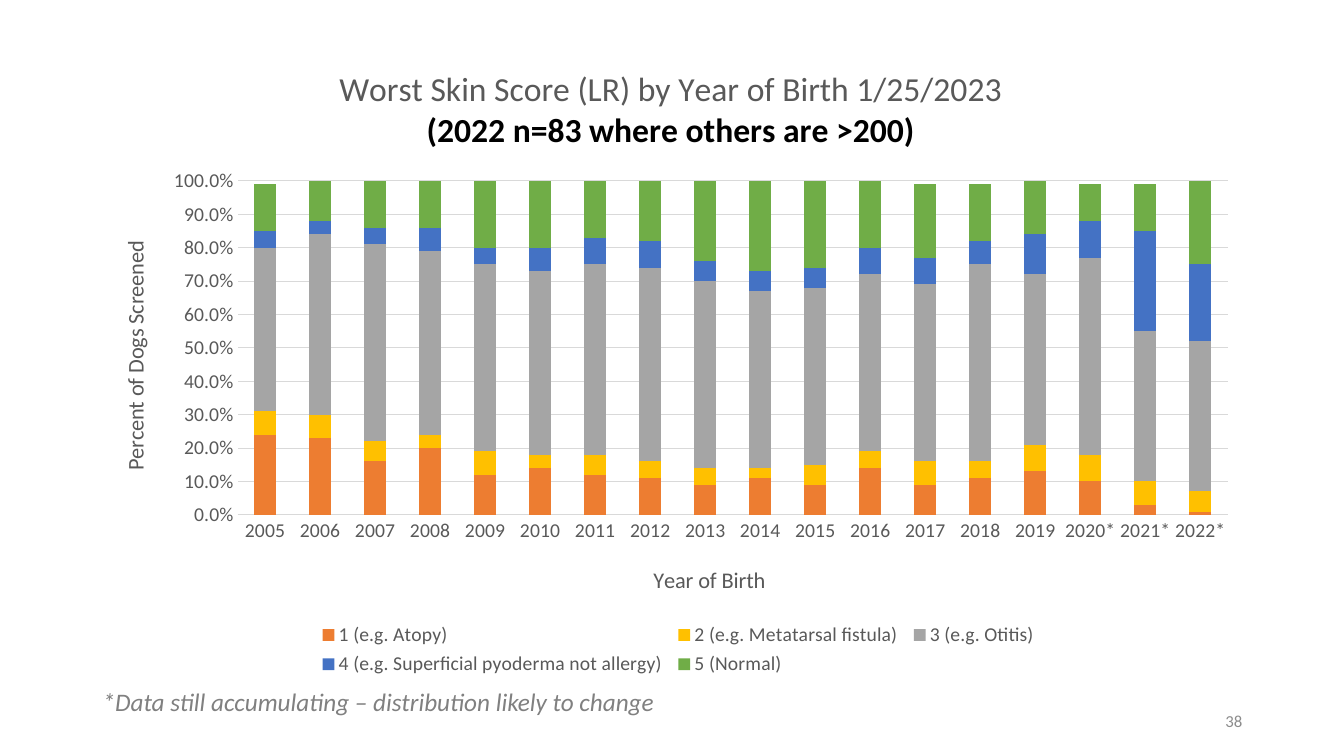
from dataclasses import dataclass

from pptx import Presentation
from pptx.chart.data import CategoryChartData
from pptx.dml.color import RGBColor
from pptx.enum.chart import XL_CHART_TYPE as ChartType
from pptx.enum.chart import XL_LEGEND_POSITION as LegendPosition
from pptx.enum.chart import XL_TICK_MARK as TickMark
from pptx.enum.text import MSO_ANCHOR as Anchor
from pptx.enum.text import PP_ALIGN as Align
from pptx.oxml import parse_xml
from pptx.oxml.ns import nsdecls, qn
from pptx.util import Inches, Pt


@dataclass(frozen=True)
class Theme:
    font: str = "Calibri"
    text: str = "595959"
    emphasis: str = "000000"
    note: str = "808080"
    number: str = "8C8C8C"
    rule: str = "D9D9D9"
    title_size: int = 24
    note_size: int = 18
    axis_title_size: int = 16
    label_size: int = 14
    number_size: int = 12


@dataclass(frozen=True)
class ScoreSeries:
    name: str
    color: str
    percents: tuple[int, ...]


@dataclass(frozen=True)
class TextStyle:
    size: int
    color: str
    bold: bool = False
    italic: bool = False


@dataclass(frozen=True)
class Caption:
    text: str
    left: float
    top: float
    width: float
    style: TextStyle
    align: Align = Align.LEFT
    anchor: Anchor = Anchor.TOP


THEME = Theme()
TITLE_STYLE = TextStyle(THEME.title_size, THEME.text)
TITLE_NOTE_STYLE = TextStyle(THEME.title_size, THEME.emphasis, bold=True)
AXIS_TITLE_STYLE = TextStyle(THEME.axis_title_size, THEME.text)
LABEL_STYLE = TextStyle(THEME.label_size, THEME.text)

YEARS = [f"{year}*" if year >= 2020 else str(year) for year in range(2005, 2023)]
SCORES = (
    ScoreSeries("1 (e.g. Atopy)", "ED7D31",
                (24, 23, 16, 20, 12, 14, 12, 11, 9, 11, 9, 14, 9, 11, 13, 10, 3, 1)),
    ScoreSeries("2 (e.g. Metatarsal fistula)", "FFC000",
                (7, 7, 6, 4, 7, 4, 6, 5, 5, 3, 6, 5, 7, 5, 8, 8, 7, 6)),
    ScoreSeries("3 (e.g. Otitis)", "A5A5A5",
                (49, 54, 59, 55, 56, 55, 57, 58, 56, 53, 53, 53, 53, 59, 51, 59, 45, 45)),
    ScoreSeries("4 (e.g. Superficial pyoderma not allergy)", "4472C4",
                (5, 4, 5, 7, 5, 7, 8, 8, 6, 6, 6, 8, 8, 7, 12, 11, 30, 23)),
    ScoreSeries("5 (Normal)", "70AD47",
                (14, 12, 14, 14, 20, 21, 17, 18, 24, 28, 26, 20, 22, 17, 16, 11, 14, 25)),
)
CAPTIONS = (
    Caption("*Data still accumulating – distribution likely to change", 0.92, 6.76, 9.36,
            TextStyle(THEME.note_size, THEME.note, italic=True)),
    Caption("38", 9.42, 6.95, 3, TextStyle(THEME.number_size, THEME.number),
            Align.RIGHT, Anchor.MIDDLE),
)


def style_font(font, style: TextStyle) -> None:
    font.name = THEME.font
    font.size = Pt(style.size)
    font.bold = style.bold
    font.italic = style.italic
    font.color.rgb = RGBColor.from_string(style.color)


def add_span(para, text: str, style: TextStyle) -> None:
    span = para.add_run()
    span.text = text
    style_font(span.font, style)


def place(element, index: int, **fractions: float) -> None:
    """Set a manual layout, in fractions of the chart, as child number index."""
    for old in element.findall(qn("c:layout")):
        element.remove(old)
    target = '<c:layoutTarget val="inner"/>' if element.tag == qn("c:plotArea") else ""
    modes = '<c:xMode val="edge"/><c:yMode val="edge"/>'
    values = "".join(f'<c:{key} val="{value}"/>' for key, value in fractions.items())
    element.insert(index, parse_xml(
        f'<c:layout {nsdecls("c")}><c:manualLayout>{target}{modes}{values}'
        "</c:manualLayout></c:layout>"))


def fill_title(title, lines: list[tuple[str, TextStyle]], x: float, y: float) -> None:
    frame = title.text_frame
    for number, (text, style) in enumerate(lines):
        para = frame.add_paragraph() if number else frame.paragraphs[0]
        para.alignment = Align.CENTER
        add_span(para, text, style)
    place(title.element, 1, x=x, y=y)


def style_axis(axis, title: str, x: float, y: float) -> None:
    axis.major_tick_mark = axis.minor_tick_mark = TickMark.NONE
    style_font(axis.tick_labels.font, LABEL_STYLE)
    fill_title(axis.axis_title, [(title, AXIS_TITLE_STYLE)], x, y)


def style_rule(line) -> None:
    line.color.rgb = RGBColor.from_string(THEME.rule)
    line.width = Pt(0.75)


def add_score_chart(page) -> None:
    data = CategoryChartData(number_format="0%")
    data.categories = YEARS
    for score in SCORES:
        data.add_series(score.name, [percent / 100 for percent in score.percents])
    chart = page.shapes.add_chart(
        ChartType.COLUMN_STACKED, Inches(0.92), Inches(0.46),
        Inches(11.5), Inches(6.3), data).chart
    style_font(chart.font, LABEL_STYLE)

    plot = chart.plots[0]
    plot.vary_by_categories = False
    plot.gap_width, plot.overlap = 150, 100
    for series, score in zip(plot.series, SCORES):
        series.format.fill.solid()
        series.format.fill.fore_color.rgb = RGBColor.from_string(score.color)

    chart.has_title = True
    fill_title(chart.chart_title, [
        ("Worst Skin Score (LR) by Year of Birth 1/25/2023", TITLE_STYLE),
        ("(2022 n=83 where others are >200)", TITLE_NOTE_STYLE),
    ], 0.21, 0.03)

    years, share = chart.category_axis, chart.value_axis
    style_axis(years, "Year of Birth", 0.48, 0.81)
    style_rule(years.format.line)
    style_axis(share, "Percent of Dogs Screened", 0.02, 0.3)
    share.format.line.fill.background()
    share.minimum_scale, share.maximum_scale, share.major_unit = 0, 1, 0.1
    share.tick_labels.number_format = "0.0%"
    share.tick_labels.number_format_is_linked = False
    style_rule(share.major_gridlines.format.line)

    chart.has_legend = True
    chart.legend.position = LegendPosition.BOTTOM
    chart.legend.include_in_layout = False
    style_font(chart.legend.font, LABEL_STYLE)

    body = chart.element.find(qn("c:chart"))
    place(body.find(qn("c:plotArea")), 0, x=0.125, y=0.212, w=0.854, h=0.526)
    place(body.find(qn("c:legend")), 1, x=0.19, y=0.9, w=0.63, h=0.1)


def add_caption(page, caption: Caption) -> None:
    box = page.shapes.add_textbox(Inches(caption.left), Inches(caption.top),
                                  Inches(caption.width), Inches(0.4))
    frame = box.text_frame
    frame.word_wrap = True
    frame.vertical_anchor = caption.anchor
    para = frame.paragraphs[0]
    para.alignment = caption.align
    add_span(para, caption.text, caption.style)


def main() -> None:
    deck = Presentation()
    deck.slide_width, deck.slide_height = Inches(13.33), Inches(7.5)
    page = deck.slides.add_slide(deck.slide_layouts[6])
    add_score_chart(page)
    for caption in CAPTIONS:
        add_caption(page, caption)
    deck.save("out.pptx")


if __name__ == "__main__":
    main()
